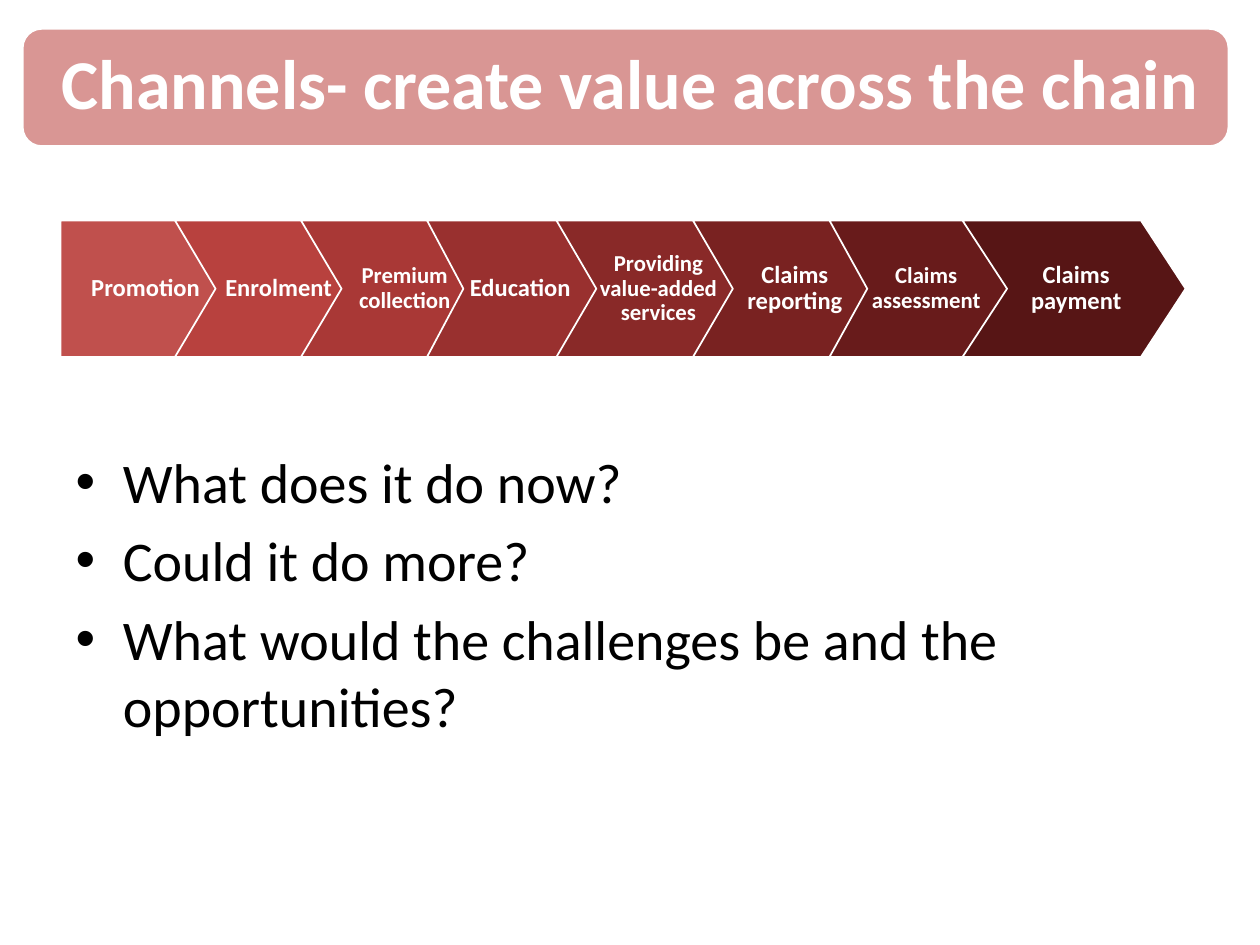
from pptx import Presentation
from pptx import util as u
from pptx.dml import color
from pptx.enum import shapes, text

FONT = "Calibri"
WHITE = "FFFFFF"
CHAIN_TOP, CHAIN_HEIGHT = 126, 78
TIP_RATIO = 0.2

STAGES = [
    ("Promotion", 34.6, 103.7, 14, "C0504D"),
    ("Enrolment", 100, 116, 14, "B8413E"),
    ("Premium collection", 172, 116, 13, "A93836"),
    ("Education", 244, 104, 14, "99302F"),
    ("Providing value-added services", 318, 114, 13, "892928"),
    ("Claims reporting", 396, 114, 14, "792221"),
    ("Claims assessment", 474, 108, 13, "681B1B"),
    ("Claims payment", 550, 127.5, 14, "571515"),
]
QUESTIONS = [
    "What does it do now?",
    "Could it do more?",
    "What would the challenges be and the opportunities?",
]


def rgb(value):
    return color.RGBColor.from_string(value)


def paint(shape, fill, line_width):
    shape.shadow.inherit = False
    shape.fill.solid()
    shape.fill.fore_color.rgb = rgb(fill)
    shape.line.color.rgb = rgb(WHITE)
    shape.line.width = u.Pt(line_width)


def place(shape, left, top, width, height):
    shape.left, shape.top = u.Pt(left), u.Pt(top)
    shape.width, shape.height = u.Pt(width), u.Pt(height)


def set_insets(frame, left, top, right, bottom):
    frame.margin_left, frame.margin_top = u.Pt(left), u.Pt(top)
    frame.margin_right, frame.margin_bottom = u.Pt(right), u.Pt(bottom)


def style_runs(frame, size, hue, bold=False):
    for paragraph in frame.paragraphs:
        for run in paragraph.runs:
            run.font.name = FONT
            run.font.size = u.Pt(size)
            run.font.bold = bold
            run.font.color.rgb = rgb(hue)


def write_label(frame, words, size):
    frame.text = words
    frame.word_wrap = True
    frame.auto_size = text.MSO_AUTO_SIZE.NONE
    frame.vertical_anchor = text.MSO_ANCHOR.MIDDLE
    frame.paragraphs[0].alignment = text.PP_ALIGN.CENTER
    frame.paragraphs[0].line_spacing = 0.9
    style_runs(frame, size, WHITE, bold=True)


def add_title(slide):
    title = slide.shapes.title
    place(title, 0, 18.7, 720, 62)
    write_label(title.text_frame, "Channels- create value across the chain", 40)
    set_insets(title.text_frame, 13, 13, 13, 13)
    banner = slide.shapes.add_shape(
        shapes.MSO_SHAPE.ROUNDED_RECTANGLE,
        u.Pt(12.5), u.Pt(16), u.Pt(690), u.Pt(68))
    paint(banner, "D99694", 2)
    title.element.addprevious(banner.element)


def add_stage(slide, words, left, width, size, fill, is_first):
    tip = width * TIP_RATIO
    right, middle = left + width, CHAIN_TOP + CHAIN_HEIGHT / 2
    bottom = CHAIN_TOP + CHAIN_HEIGHT
    outline = [(right - tip, CHAIN_TOP), (right, middle),
               (right - tip, bottom), (left, bottom)]
    if not is_first:
        outline.append((left + tip, middle))
    builder = slide.shapes.build_freeform(u.Pt(left), u.Pt(CHAIN_TOP))
    builder.add_line_segments([(u.Pt(x), u.Pt(y)) for x, y in outline], close=True)
    stage = builder.convert_to_shape()
    paint(stage, fill, 1)
    write_label(stage.text_frame, words, size)
    left_inset, right_inset = (5, 11.5) if is_first else (23.5, 21)
    set_insets(stage.text_frame, left_inset, 2.5, right_inset, 2.5)


def add_questions(slide):
    questions = slide.placeholders[1]
    place(questions, 36, 252, 648, 254)
    questions.text_frame.text = "\n".join(QUESTIONS)
    style_runs(questions.text_frame, 32, "000000")


def main():
    deck = Presentation()
    deck.slide_width, deck.slide_height = u.Pt(720), u.Pt(540)
    slide = deck.slides.add_slide(deck.slide_layouts[1])
    add_title(slide)
    add_questions(slide)
    for index, stage in enumerate(STAGES):
        add_stage(slide, *stage, is_first=index == 0)
    deck.save("out.pptx")


if __name__ == "__main__":
    main()
